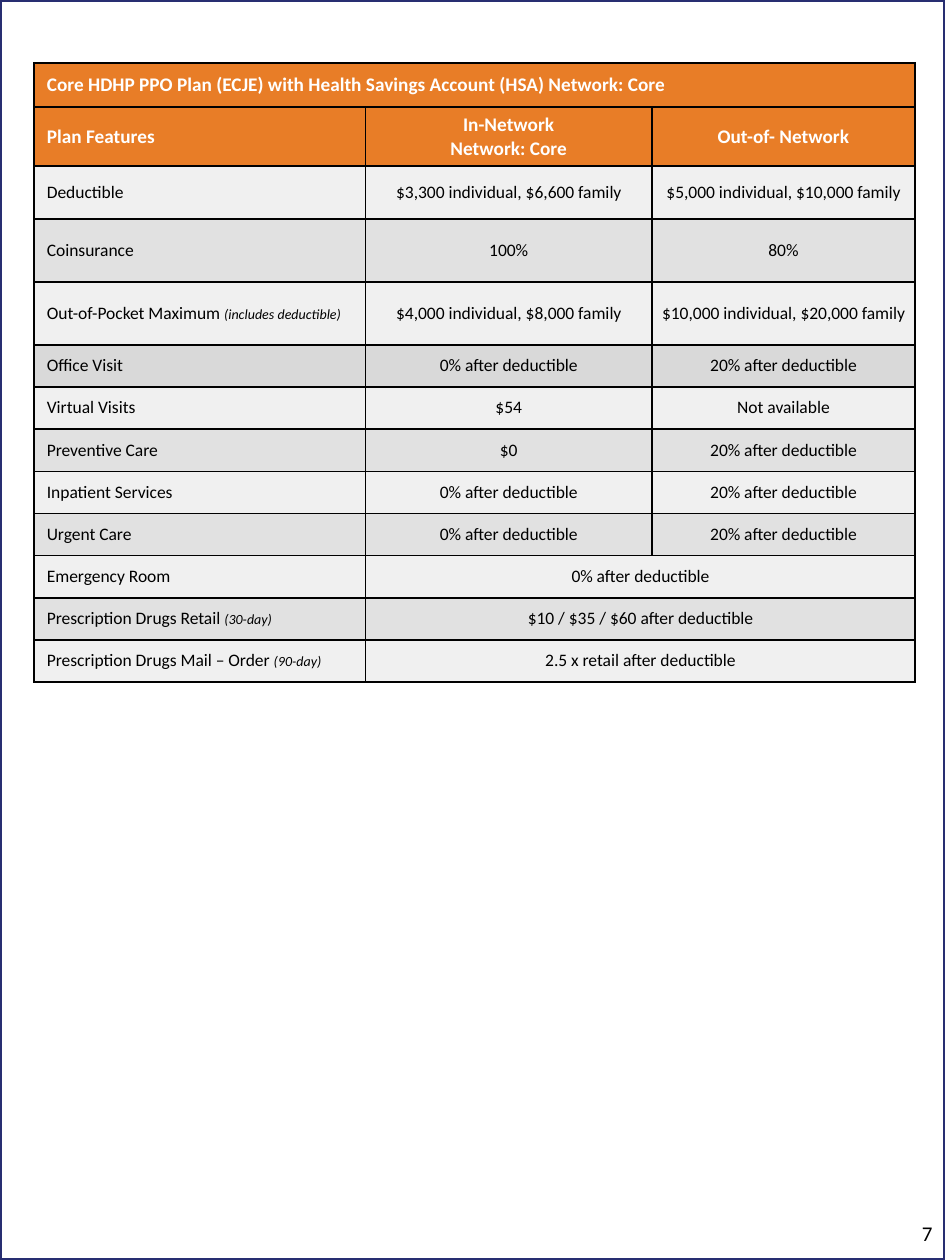
from lxml import etree
from pptx import Presentation
from pptx.dml.color import RGBColor
from pptx.enum.shapes import MSO_SHAPE
from pptx.enum.text import MSO_ANCHOR, PP_ALIGN
from pptx.oxml.ns import qn
from pptx.util import Cm, Pt

RECT = MSO_SHAPE.RECTANGLE
MIDDLE = MSO_ANCHOR.MIDDLE
LEFT, CENTER, RIGHT = PP_ALIGN.LEFT, PP_ALIGN.CENTER, PP_ALIGN.RIGHT

# Content: label, optional note, then one value per column (one value spans both)
TITLE = "Core HDHP PPO Plan (ECJE) with Health Savings Account (HSA) Network: Core"
HEADS = ["Plan Features", "In-Network\nNetwork: Core", "Out-of- Network"]
ZERO, TWENTY = "0% after deductible", "20% after deductible"
PLAN = [
    ("Deductible", "", "$3,300 individual, $6,600 family", "$5,000 individual, $10,000 family"),
    ("Coinsurance", "", "100%", "80%"),
    ("Out-of-Pocket Maximum ", "(includes deductible)",
     "$4,000 individual, $8,000 family", "$10,000 individual, $20,000 family"),
    ("Office Visit", "", ZERO, TWENTY),
    ("Virtual Visits", "", "$54", "Not available"),
    ("Preventive Care", "", "$0", TWENTY),
    ("Inpatient Services", "", ZERO, TWENTY),
    ("Urgent Care", "", ZERO, TWENTY),
    ("Emergency Room", "", ZERO),
    ("Prescription Drugs Retail ", "(30-day)", "$10 / $35 / $60 after deductible"),
    ("Prescription Drugs Mail – Order ", "(90-day)", "2.5 x retail after deductible"),
]
PAGE = "7"

# Look
FONT = "Calibri"
NAVY, ORANGE, WHITE, BLACK = "282E71", "E87D27", "FFFFFF", "000000"
BANDS = ["F0F0F0", "E1E1E1"]
TINTS = {"Office Visit": "D9D9D9"}
COLS = [6.68, 5.77, 5.31]
ROWS = [0.89, 1.19, 1.06, 1.27, 1.27] + [0.85] * 8


def color(code):
    return RGBColor.from_string(code)


def write(frame, text, note="", size=10, tint=BLACK, bold=False, align=LEFT):
    frame.word_wrap = True
    for i, line in enumerate(text.split("\n")):
        para = frame.paragraphs[0] if i == 0 else frame.add_paragraph()
        para.alignment = align
        parts = [(line, size, False)]
        if note:
            parts.append((note, 8, True))
        for words, points, slant in parts:
            run = para.add_run()
            run.text = words
            font = run.font
            font.name, font.size = FONT, Pt(points)
            font.bold, font.italic = bold, slant
            font.color.rgb = color(tint)


def edge(cell):
    props = cell._tc.get_or_add_tcPr()
    for i, side in enumerate(["a:lnL", "a:lnR", "a:lnT", "a:lnB"]):
        line = etree.Element(qn(side), w=str(Pt(1)))
        fill = etree.SubElement(line, qn("a:solidFill"))
        etree.SubElement(fill, qn("a:srgbClr"), val=BLACK)
        props.insert(i, line)


def fill_cell(cell, text, fill, **look):
    cell.vertical_anchor = MIDDLE
    if look.get("align") == CENTER:
        cell.margin_left = cell.margin_right = Cm(0.15)
        cell.margin_top = cell.margin_bottom = 0
    cell.fill.solid()
    cell.fill.fore_color.rgb = color(fill)
    write(cell.text_frame, text, **look)


deck = Presentation()
deck.slide_width, deck.slide_height = Cm(19.05), Cm(25.4)
slide = deck.slides.add_slide(deck.slide_layouts[6])

# Page border
border = slide.shapes.add_shape(RECT, 0, 0, deck.slide_width, deck.slide_height)
border.shadow.inherit = False
border.fill.background()
border.line.color.rgb = color(NAVY)
border.line.width = Pt(2.5)

# Table grid
grid = slide.shapes.add_table(len(ROWS), len(COLS), Cm(0.69), Cm(1.27),
                              Cm(sum(COLS)), Cm(sum(ROWS))).table
for col, width in zip(grid.columns, COLS):
    col.width = Cm(width)
for row, height in zip(grid.rows, ROWS):
    row.height = Cm(height)
for cell in grid.iter_cells():
    edge(cell)

# Header rows
head = dict(fill=ORANGE, size=11, tint=WHITE, bold=True)
grid.cell(0, 0).merge(grid.cell(0, 2))
fill_cell(grid.cell(0, 0), TITLE, **head)
for c, text in enumerate(HEADS):
    fill_cell(grid.cell(1, c), text, align=CENTER if c else LEFT, **head)

# Plan rows
for i, (label, note, *values) in enumerate(PLAN):
    r = i + 2
    fill = TINTS.get(label, BANDS[i % 2])
    fill_cell(grid.cell(r, 0), label, fill, note=note)
    if len(values) == 1:
        grid.cell(r, 1).merge(grid.cell(r, 2))
    for c, text in enumerate(values, 1):
        fill_cell(grid.cell(r, c), text, fill, align=CENTER)

# Page number
box = slide.shapes.add_textbox(Cm(14.76), Cm(24.43), Cm(4.29), Cm(0.84))
box.text_frame.vertical_anchor = MIDDLE
write(box.text_frame, PAGE, size=12, align=RIGHT)

deck.save("out.pptx")
